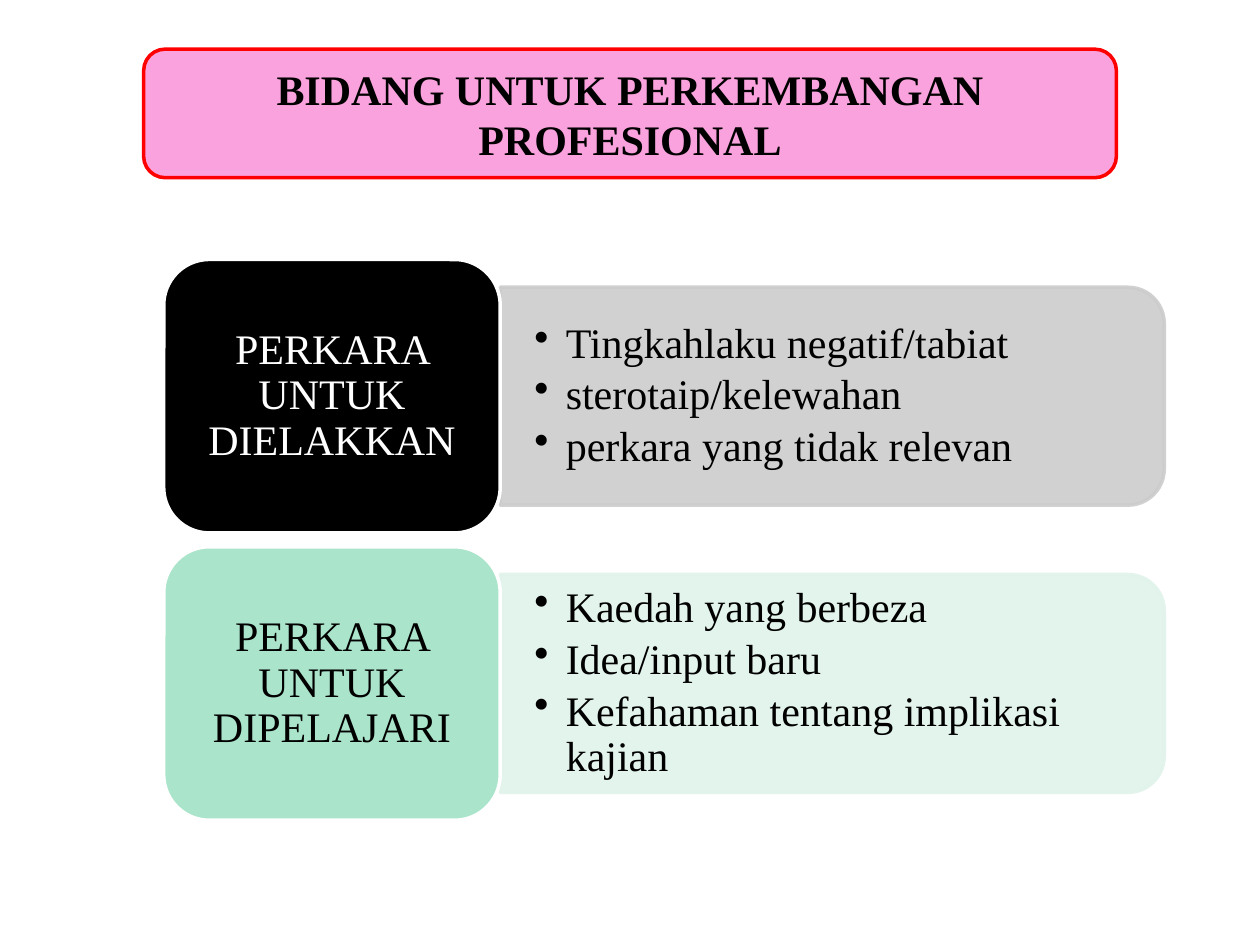
from lxml import etree
from pptx import Presentation
from pptx.dml.color import RGBColor
from pptx.enum.shapes import MSO_SHAPE
from pptx.enum.text import MSO_ANCHOR, PP_ALIGN
from pptx.oxml.ns import qn
from pptx.util import Inches, Pt

ROUNDED = MSO_SHAPE.ROUNDED_RECTANGLE
ROUNDED_TOP = MSO_SHAPE.ROUND_2_SAME_RECTANGLE
MIDDLE = MSO_ANCHOR.MIDDLE
CENTER = PP_ALIGN.CENTER
FONT = "Times New Roman"
TEXT_SIZE = 24
BLACK, WHITE = "000000", "FFFFFF"

SLIDE_W, SLIDE_H = 10, 7.5
LABEL_LEFT, LABEL_W, ROW_H = 1.3, 2.67, 2.17
FIRST_ROW, ROW_STEP = 2.06, 2.28
PANEL_LEFT, PANEL_W, PANEL_H = LABEL_LEFT + LABEL_W, 5.27, 1.73
LIST_W, LIST_H = 5.19, 1.57

TOPICS = [
    ("PERKARA UNTUK DIELAKKAN", BLACK, WHITE, "CCCCCC",
     ["Tingkahlaku negatif/tabiat", "sterotaip/kelewahan",
      "perkara yang tidak relevan"]),
    ("PERKARA UNTUK DIPELAJARI", "AAE4CB", BLACK, "E1F3EA",
     ["Kaedah yang berbeza", "Idea/input baru",
      "Kefahaman tentang implikasi kajian"]),
]


def paint(color_format, hex_color, opacity=100):
    color_format.rgb = RGBColor.from_string(hex_color)


def set_opacity(fill_parent, percent):
    for color in fill_parent.iter(qn("a:srgbClr")):
        etree.SubElement(color, qn("a:alpha"), val=str(percent * 1000))


def add_block(slide, preset, box, fill, outline):
    block = slide.shapes.add_shape(preset, *map(Inches, box))
    block.shadow.inherit = False
    block.fill.solid()
    paint(block.fill.fore_color, fill)
    paint(block.line.color, outline)
    block.line.width = Pt(2)
    return block


def style(paragraph, color, bold=False):
    paragraph.font.name = FONT
    paragraph.font.size = Pt(TEXT_SIZE)
    paragraph.font.bold = bold
    paint(paragraph.font.color, color)


def add_caption(slide, box, text, fill, outline, color, bold=False, spacing=1.0):
    caption = add_block(slide, ROUNDED, box, fill, outline)
    frame = caption.text_frame
    frame.word_wrap = True
    frame.vertical_anchor = MIDDLE
    paragraph = frame.paragraphs[0]
    paragraph.text = text
    paragraph.alignment = CENTER
    paragraph.line_spacing = spacing
    style(paragraph, color, bold)


def add_panel(slide, center_y, color):
    left = PANEL_LEFT + (PANEL_W - PANEL_H) / 2
    top = center_y - PANEL_W / 2
    panel = add_block(slide, ROUNDED_TOP, (left, top, PANEL_H, PANEL_W), color, color)
    panel.rotation = 90
    set_opacity(panel._element.spPr, 90)


def add_bullet(paragraph):
    properties = paragraph._p.get_or_add_pPr()
    properties.set("marL", str(Inches(0.25)))
    properties.set("indent", str(-Inches(0.25)))
    etree.SubElement(properties, qn("a:buChar"), char="•")


def add_list(slide, center_y, items):
    box = (PANEL_LEFT, center_y - LIST_H / 2, LIST_W, LIST_H)
    frame = slide.shapes.add_textbox(*map(Inches, box)).text_frame
    frame.word_wrap = True
    frame.vertical_anchor = MIDDLE
    frame.margin_left = frame.margin_right = Inches(0.27)
    frame.margin_top = frame.margin_bottom = Inches(0.14)
    for index, item in enumerate(items):
        paragraph = frame.add_paragraph() if index else frame.paragraphs[0]
        paragraph.text = item
        add_bullet(paragraph)
        paragraph.line_spacing = 0.9
        paragraph.space_after = Pt(0.15 * TEXT_SIZE)
        style(paragraph, BLACK)


def main():
    deck = Presentation()
    deck.slide_width, deck.slide_height = Inches(SLIDE_W), Inches(SLIDE_H)
    slide = deck.slides.add_slide(deck.slide_layouts[6])
    for row, (label, fill, ink, panel_color, items) in enumerate(TOPICS):
        top = FIRST_ROW + row * ROW_STEP
        center_y = top + ROW_H / 2
        add_panel(slide, center_y, panel_color)
        add_list(slide, center_y, items)
        add_caption(slide, (LABEL_LEFT, top, LABEL_W, ROW_H), label, fill, WHITE,
                    ink, spacing=0.9)
    add_caption(slide, (1.14, 0.39, 7.72, 1.02),
                "BIDANG UNTUK PERKEMBANGAN PROFESIONAL", "FAA2DD", "FF0000",
                BLACK, bold=True)
    deck.save("out.pptx")


if __name__ == "__main__":
    main()
